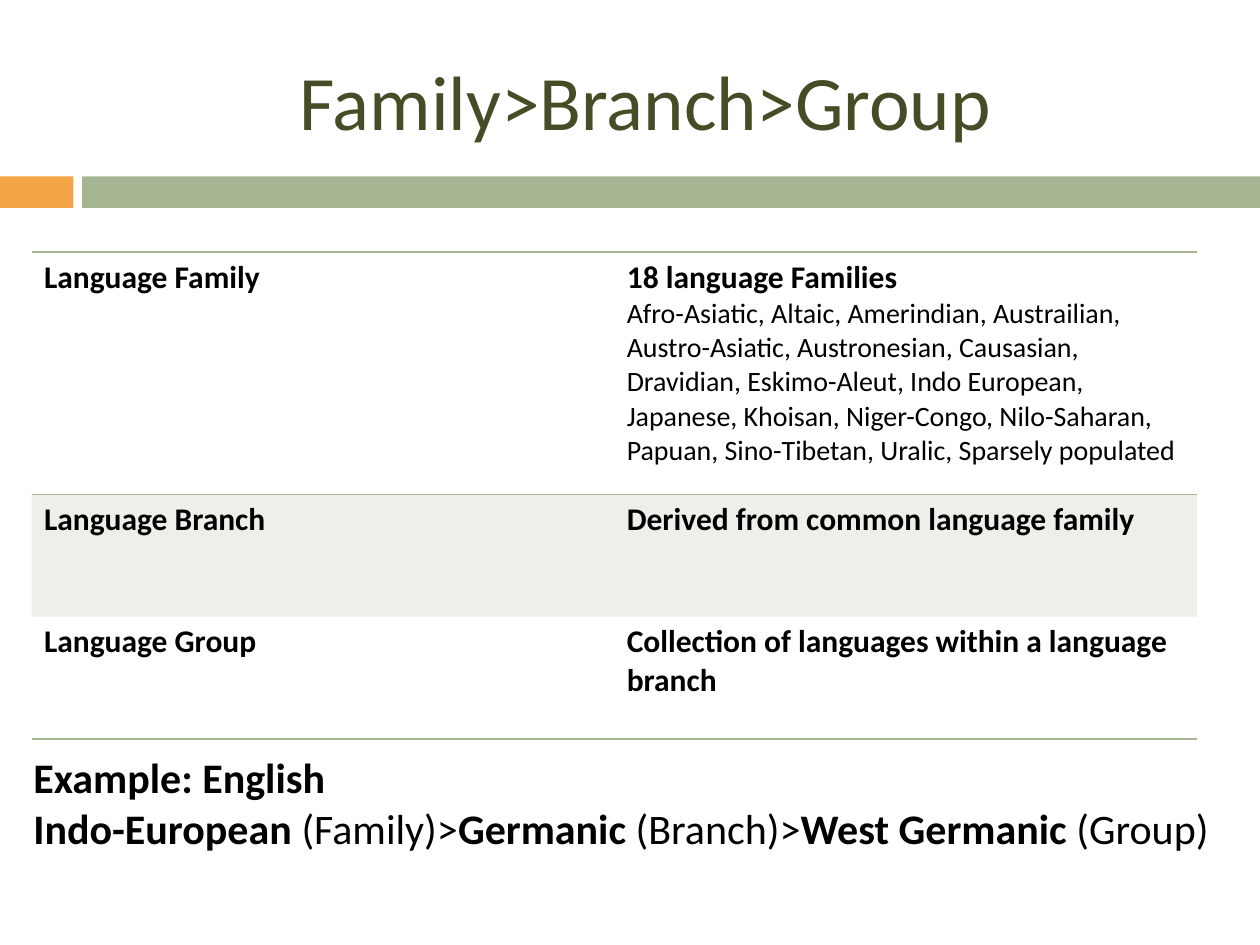
from dataclasses import dataclass

from lxml import etree
from pptx import Presentation
from pptx.dml.color import RGBColor
from pptx.enum import shapes, text
from pptx.oxml import ns
from pptx.util import Pt


@dataclass(frozen=True)
class Theme:
    font: str = "Calibri"
    heading: str = "444D26"
    ink: str = "000000"
    sage: str = "A5B592"
    orange: str = "F3A447"
    band_opacity: int = 20
    title_size: int = 44
    example_size: int = 24
    term_size: int = 18
    detail_size: int = 16
    rule_width: float = 1
    divider_width: float = 0.5


THEME = Theme()
PLAIN_TABLE_STYLE = "{2D5ABB26-0587-4C30-8999-92F81FD0307C}"

# Each level: term, then definition paragraphs as (wording, size, bold)
LEVELS = [
    ("Language Family", [
        ("18 language Families", THEME.term_size, True),
        ("Afro-Asiatic, Altaic, Amerindian, Austrailian, Austro-Asiatic, "
         "Austronesian, Causasian, Dravidian, Eskimo-Aleut, Indo European, "
         "Japanese, Khoisan, Niger-Congo, Nilo-Saharan, Papuan, Sino-Tibetan, "
         "Uralic, Sparsely populated", THEME.detail_size, False)]),
    ("Language Branch", [
        ("Derived from common language family", THEME.term_size, True)]),
    ("Language Group", [
        ("Collection of languages within a language branch", THEME.term_size, True)]),
]
ROW_HEIGHTS = [138.4, 70, 70]

EXAMPLE = [
    [("Example: English", True)],
    [("Indo-European ", True), ("(Family)>", False),
     ("Germanic ", True), ("(Branch)>", False),
     ("West Germanic ", True), ("(Group)", False)],
]


def add_run(paragraph, wording, size, color=THEME.ink, bold=False):
    run = paragraph.add_run()
    run.text = wording
    run.font.name = THEME.font
    run.font.size = Pt(size)
    run.font.bold = bold
    run.font.color.rgb = RGBColor.from_string(color)


def paragraph_at(frame, index):
    return frame.paragraphs[0] if index == 0 else frame.add_paragraph()


def add_header_bar(slide, left, top, width, height):
    accent_width, gap = 42, 5
    main_left = accent_width + gap
    for x, w, color in [(left, accent_width, THEME.orange),
                        (left + main_left, width - main_left, THEME.sage)]:
        bar = slide.shapes.add_shape(shapes.MSO_SHAPE.RECTANGLE,
                                     Pt(x), Pt(top), Pt(w), Pt(height))
        bar.shadow.inherit = False
        bar.fill.solid()
        bar.fill.fore_color.rgb = RGBColor.from_string(color)
        bar.line.fill.background()


def set_title(slide, left, top, width, height):
    title = slide.shapes.title
    title.left, title.top = Pt(left), Pt(top)
    title.width, title.height = Pt(width), Pt(height)
    frame = title.text_frame
    frame.vertical_anchor = text.MSO_ANCHOR.MIDDLE
    frame.paragraphs[0].alignment = text.PP_ALIGN.CENTER
    add_run(frame.paragraphs[0], "Family>Branch>Group", THEME.title_size, THEME.heading)


def add_rule(cell, side, width):
    """Draw a cell border; call for the top before the bottom, and before any fill."""
    line = etree.SubElement(cell._tc.get_or_add_tcPr(), ns.qn(f"a:ln{side}"), w=str(Pt(width)))
    fill = etree.SubElement(line, ns.qn("a:solidFill"))
    etree.SubElement(fill, ns.qn("a:srgbClr"), val=THEME.sage)


def shade(cell):
    cell.fill.solid()
    cell.fill.fore_color.rgb = RGBColor.from_string(THEME.sage)
    color = cell._tc.tcPr.find(".//" + ns.qn("a:srgbClr"))
    etree.SubElement(color, ns.qn("a:alpha"), val=str(THEME.band_opacity * 1000))


def add_levels_table(slide, left, top, width):
    table = slide.shapes.add_table(len(LEVELS), 2, Pt(left), Pt(top),
                                   Pt(width), Pt(sum(ROW_HEIGHTS))).table
    table.first_row = table.horz_banding = False
    table._tbl.tblPr.find(ns.qn("a:tableStyleId")).text = PLAIN_TABLE_STYLE
    last = len(LEVELS) - 1
    for r, (term, definition) in enumerate(LEVELS):
        table.rows[r].height = Pt(ROW_HEIGHTS[r])
        for c, content in enumerate([[(term, THEME.term_size, True)], definition]):
            cell = table.cell(r, c)
            for i, (wording, size, bold) in enumerate(content):
                add_run(paragraph_at(cell.text_frame, i), wording, size, bold=bold)
            if r == 0:
                add_rule(cell, "T", THEME.rule_width)
                add_rule(cell, "B", THEME.divider_width)
            if r == last:
                add_rule(cell, "B", THEME.rule_width)
            if r % 2:
                shade(cell)
            else:
                cell.fill.background()


def add_example(slide, left, top, width, height):
    frame = slide.shapes.add_textbox(Pt(left), Pt(top), Pt(width), Pt(height)).text_frame
    frame.word_wrap = True
    frame.auto_size = text.MSO_AUTO_SIZE.SHAPE_TO_FIT_TEXT
    for i, line in enumerate(EXAMPLE):
        paragraph = paragraph_at(frame, i)
        for wording, bold in line:
            add_run(paragraph, wording, THEME.example_size, bold=bold)


def main():
    deck = Presentation()
    deck.slide_width, deck.slide_height = Pt(720), Pt(540)
    slide = deck.slides.add_slide(deck.slide_layouts[5])
    add_header_bar(slide, 0, 100.8, 720, 18)
    set_title(slide, 48, 18, 642, 78)
    add_levels_table(slide, 18, 144, 666)
    add_example(slide, 12, 426, 690, 65.4)
    deck.save("out.pptx")


if __name__ == "__main__":
    main()
